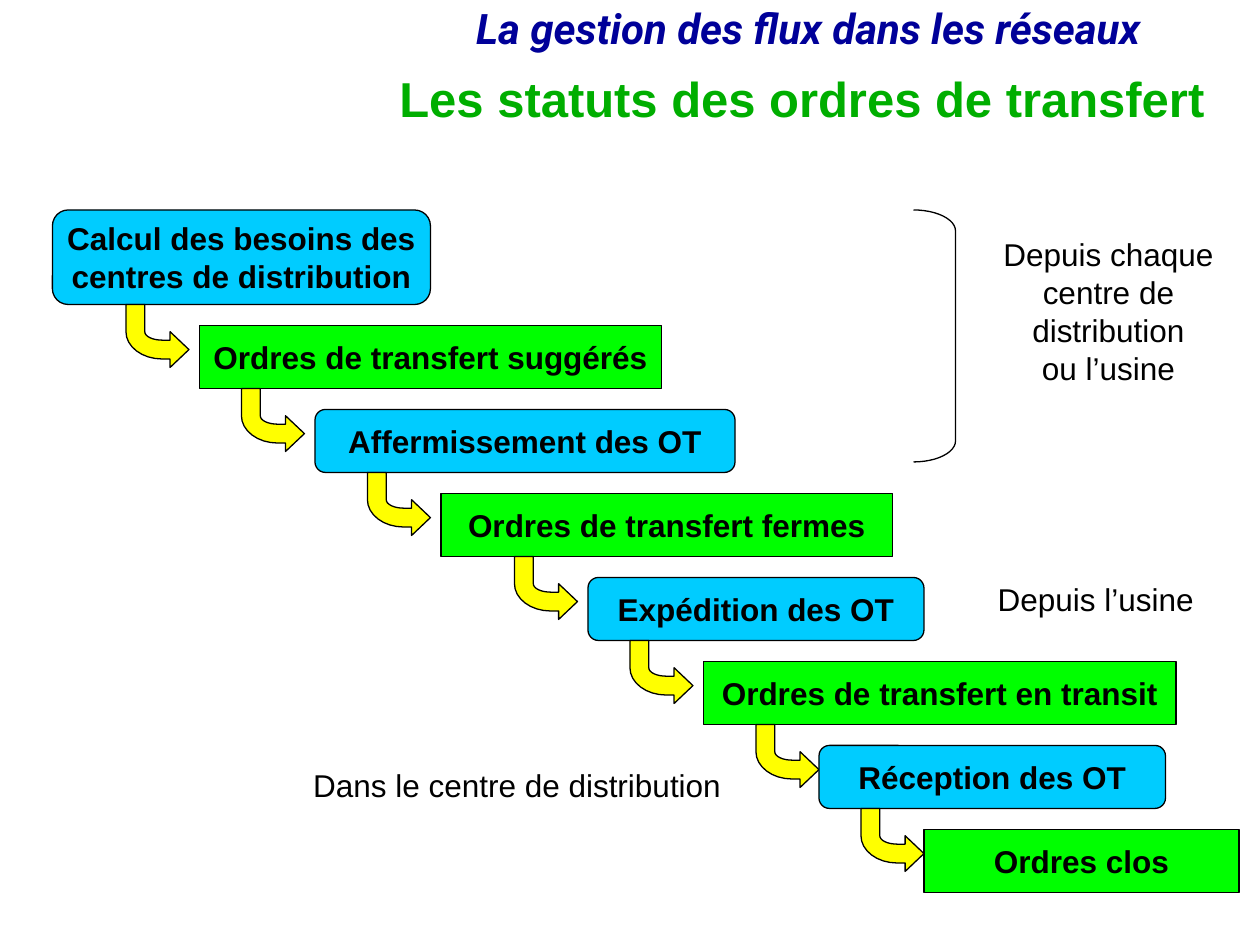
from dataclasses import dataclass
from math import cos, pi, sin

from pptx import Presentation
from pptx.dml.color import RGBColor
from pptx.enum.shapes import MSO_SHAPE
from pptx.enum.text import MSO_ANCHOR, PP_ALIGN
from pptx.util import Cm, Pt

UNIT = 2.54 / 12


@dataclass(frozen=True)
class Theme:
    """Colours, fonts and type sizes of the slide."""
    ink: str = "000000"
    navy: str = "000099"
    green: str = "00AE00"
    task: str = "00CCFF"
    state: str = "00FF00"
    arrow: str = "FFFF00"
    face: str = "Arial"
    accent: str = "Roboto"
    body: int = 18
    topic: int = 24
    head: int = 28
    edge: float = 0.75


def apply(item, form):
    """Set each attribute named in form on item."""
    for name, value in form.items():
        setattr(item, name, value)


def bend(width, height, start, end, count=8):
    """Give points on a quarter ellipse centred at the bend of the arrow."""
    turns = [start + (end - start) * i / count for i in range(count + 1)]
    return [(0.73 + width * cos(t), 0.55 + height * sin(t)) for t in turns]


class Deck:
    """Hold the theme and the current slide."""

    def __init__(self, theme):
        """Start a file with one title-only slide."""
        self.theme = theme
        self.file = Presentation()
        apply(self.file, {"slide_width": Cm(25.4), "slide_height": Cm(19.05)})
        self.slide = self.file.slides.add_slide(self.file.slide_layouts[5])

    def letter(self, shape, text, align=PP_ALIGN.CENTER, color=None,
               wrap=False, space=1.0, **font):
        """Fill a shape with formatted text."""
        frame = shape.text_frame
        frame.text = text
        apply(frame, {"word_wrap": wrap, "vertical_anchor": MSO_ANCHOR.MIDDLE})
        form = {"name": self.theme.face, "size": Pt(self.theme.body), **font}
        for para in frame.paragraphs:
            apply(para, {"alignment": align, "line_spacing": space})
            for run in para.runs:
                apply(run.font, form)
                run.font.color.rgb = RGBColor.from_string(color or self.theme.ink)

    def paint(self, shape, fill=None):
        """Give a shape its fill and thin outline."""
        shape.shadow.inherit = False
        if fill:
            shape.fill.solid()
            shape.fill.fore_color.rgb = RGBColor.from_string(fill)
        else:
            shape.fill.background()
        shape.line.color.rgb = RGBColor.from_string(self.theme.ink)
        shape.line.width = Pt(self.theme.edge)

    def title(self, text, place):
        """Move and format the title."""
        shape = self.slide.shapes.title
        apply(shape, dict(zip(("left", "top", "width", "height"), map(Cm, place))))
        self.letter(shape, text, PP_ALIGN.RIGHT, self.theme.green, True, 0.9,
                    size=Pt(self.theme.head), bold=True)

    def label(self, text, place, **form):
        """Add a text box."""
        self.letter(self.slide.shapes.add_textbox(*map(Cm, place)), text, **form)

    def box(self, text, place, kind, fill):
        """Add a step of the cascade."""
        shape = self.slide.shapes.add_shape(kind, *map(Cm, place))
        self.paint(shape, fill)
        self.letter(shape, text, bold=True)

    def arrow(self, left, top):
        """Add an arrow that turns from down to right."""
        points = [(1.27, 0.91), (0.89, 1.27), (0.89, 1.1),
                  *bend(0.73, 0.55, pi / 2, pi), (0, 0), (0.38, 0),
                  *bend(0.35, 0.17, pi, pi / 2), (0.89, 0.72), (0.89, 0.55)]
        spots = [(Cm(left + x), Cm(top + y)) for x, y in points]
        form = self.slide.shapes.build_freeform(*spots[0])
        form.add_line_segments(spots[1:], close=True)
        self.paint(form.convert_to_shape(), self.theme.arrow)

    def bracket(self, place):
        """Add a right bracket."""
        shape = self.slide.shapes.add_shape(MSO_SHAPE.RIGHT_BRACKET, *map(Cm, place))
        shape.adjustments[0] = 0.5
        self.paint(shape)


def main():
    """Build and save the slide."""
    theme = Theme()
    deck = Deck(theme)
    deck.label("La gestion des flux dans les réseaux", (9.35, 0.03, 16.1, 1.17),
               align=PP_ALIGN.LEFT, color=theme.navy, wrap=True, space=0.9,
               name=theme.accent, size=Pt(theme.topic), bold=True, italic=True)
    deck.title("Les statuts des ordres de transfert", (0.2, 0.46, 24.33, 3.18))

    steps = [
        ("Calcul des besoins des\ncentres de distribution", 5, 36, 12),
        ("Ordres de transfert suggérés", 19, 44, 23),
        ("Affermissement des OT", 30, 40, 35),
        ("Ordres de transfert fermes", 42, 43, 49),
        ("Expédition des OT", 56, 32, 60),
        ("Ordres de transfert en transit", 67, 45, 72),
        ("Réception des OT", 78, 33, 82),
        ("Ordres clos", 88, 30, None),
    ]
    kinds = [(MSO_SHAPE.ROUNDED_RECTANGLE, theme.task),
             (MSO_SHAPE.RECTANGLE, theme.state)]
    for i, (text, left, width, turn) in enumerate(steps):
        base = 29 + 8 * i
        height = 6 if i else 9
        place = [UNIT * n for n in (left, base - height, width, height)]
        deck.box(text, place, *kinds[i % 2])
        if turn:
            deck.arrow(UNIT * turn, UNIT * base)

    deck.bracket([UNIT * n for n in (87, 20, 4, 24)])
    deck.label("Depuis chaque centre de distribution\nou l’usine",
               (19.69, 4.6, 5.31, 3.33), wrap=True)
    deck.label("Depuis l’usine", (19.84, 11.56, 4.5, 1.02))
    deck.label("Dans le centre de distribution", (6.02, 15.32, 8.81, 1.02))
    deck.file.save("out.pptx")


if __name__ == "__main__":
    main()
